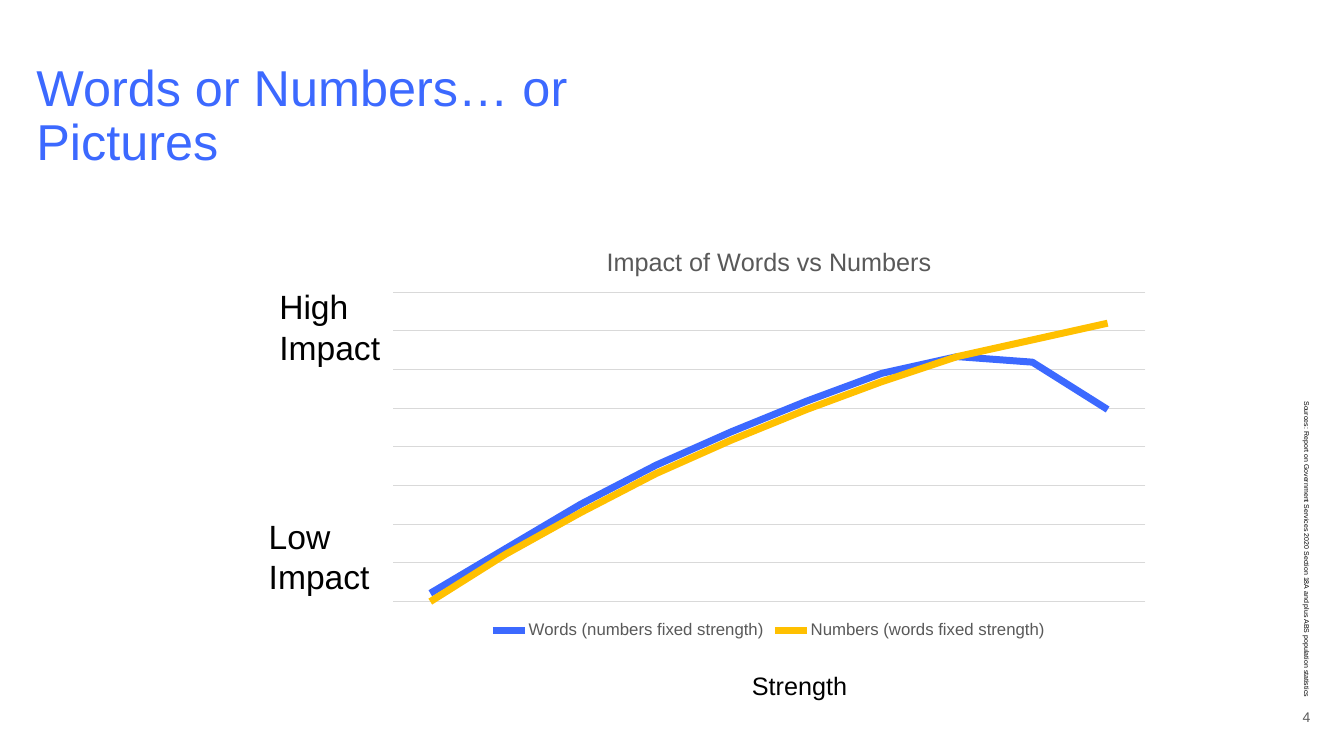
import pptx
import pptx.chart.data
import pptx.dml.color
import pptx.enum.chart
import pptx.enum.text
import pptx.util

Pt = pptx.util.Pt
Align = pptx.enum.text.PP_ALIGN
Anchor = pptx.enum.text.MSO_ANCHOR

WORDS = [3, 19, 35, 49, 61, 72, 82, 88, 86, 69]
NUMBERS = [0, 17, 32, 46, 58, 69, 79, 88, 94, 100]
GRID_STEP = 13.89
GRID_INTERVALS = 8


def rgb(value):
    return pptx.dml.color.RGBColor.from_string(value)


class SlideBuilder:
    font_name = "Arial"
    black = "000000"
    grey = "595959"
    blue = "3C69FF"
    yellow = "FFC000"
    grid = "D9D9D9"

    def __init__(self, slide):
        self.slide = slide

    def style_font(self, font, size, color):
        font.name = self.font_name
        font.size = Pt(size)
        font.bold = False
        font.color.rgb = rgb(color)

    def fill_frame(self, frame, lines, size, color, align=Align.LEFT,
                   anchor=Anchor.TOP, insets=(0, 0, 0, 0), spacing=None):
        frame.word_wrap = True
        frame.auto_size = pptx.enum.text.MSO_AUTO_SIZE.NONE
        frame.vertical_anchor = anchor
        (frame.margin_left, frame.margin_top,
         frame.margin_right, frame.margin_bottom) = map(Pt, insets)
        for index, line in enumerate(lines):
            para = frame.add_paragraph() if index else frame.paragraphs[0]
            para.alignment = align
            if spacing:
                para.line_spacing = spacing
            span = para.add_run()
            span.text = line
            self.style_font(span.font, size, color)

    def title(self, text, left, top, width, height):
        box = self.slide.shapes.title
        box.left, box.top, box.width, box.height = map(
            Pt, (left, top, width, height))
        self.fill_frame(box.text_frame, [text], 36, self.blue,
                        insets=(0, 20.7, 0, 0), spacing=0.9)

    def text(self, lines, left, top, width, height, size, color=black,
             rotation=0, **layout):
        box = self.slide.shapes.add_textbox(
            Pt(left), Pt(top), Pt(width), Pt(height))
        box.rotation = rotation
        self.fill_frame(box.text_frame, lines, size, color, **layout)

    def line_chart(self, title, series, left, top, width, height):
        """Draw a line chart from (name, values, color) entries."""
        data = pptx.chart.data.CategoryChartData()
        data.categories = [str(n + 1) for n in range(len(series[0][1]))]
        for name, values, _ in series:
            data.add_series(name, values)
        chart = self.slide.shapes.add_chart(
            pptx.enum.chart.XL_CHART_TYPE.LINE,
            Pt(left), Pt(top), Pt(width), Pt(height), data).chart
        self.style_font(chart.font, 10, self.black)

        chart.has_title = True
        span = chart.chart_title.text_frame.paragraphs[0].add_run()
        span.text = title
        self.style_font(span.font, 18, self.grey)

        chart.has_legend = True
        chart.legend.position = pptx.enum.chart.XL_LEGEND_POSITION.BOTTOM
        chart.legend.include_in_layout = False
        self.style_font(chart.legend.font, 12, self.grey)

        chart.category_axis.visible = False
        axis = chart.value_axis
        axis.visible = False
        axis.minimum_scale = 0
        axis.maximum_scale = GRID_STEP * GRID_INTERVALS
        axis.major_unit = GRID_STEP
        axis.has_major_gridlines = True
        grid_line = axis.major_gridlines.format.line
        grid_line.color.rgb = rgb(self.grid)
        grid_line.width = Pt(0.75)

        plot = chart.plots[0]
        plot.vary_by_categories = False
        for curve, (_, _, color) in zip(plot.series, series):
            curve.smooth = False
            curve.marker.style = pptx.enum.chart.XL_MARKER_STYLE.NONE
            curve.format.line.color.rgb = rgb(color)
            curve.format.line.width = Pt(5)


def main():
    deck = pptx.Presentation()
    deck.slide_width, deck.slide_height = Pt(960), Pt(540)
    page = SlideBuilder(deck.slides.add_slide(deck.slide_layouts[5]))

    page.title("Words or Numbers… or Pictures", 26, 24, 425.5, 97)
    page.text(["4"], 903, 504, 33, 14.4, 10, "5B5B5B",
              align=Align.RIGHT, anchor=Anchor.BOTTOM)
    page.text(["Sources: Report on Government Services 2020 Section 18A "
               "and plus ABS population statistics"],
              814.5, 376, 229.5, 14.4, 5, rotation=90, align=Align.RIGHT)
    page.line_chart(
        "Impact of Words vs Numbers",
        [("Words (numbers fixed strength)", WORDS, page.blue),
         ("Numbers (words fixed strength)", NUMBERS, page.yellow)],
        269.3, 162, 560, 297.4)
    page.text(["High", "Impact"], 199.5, 204.5, 78, 65.5, 24)
    page.text(["Low", "Impact"], 192, 368.6, 78, 65.5, 24)
    page.text(["Strength"], 530, 475.2, 111.6, 29, 18,
              insets=(7.2, 3.6, 7.2, 3.6))

    deck.save("out.pptx")


if __name__ == "__main__":
    main()
